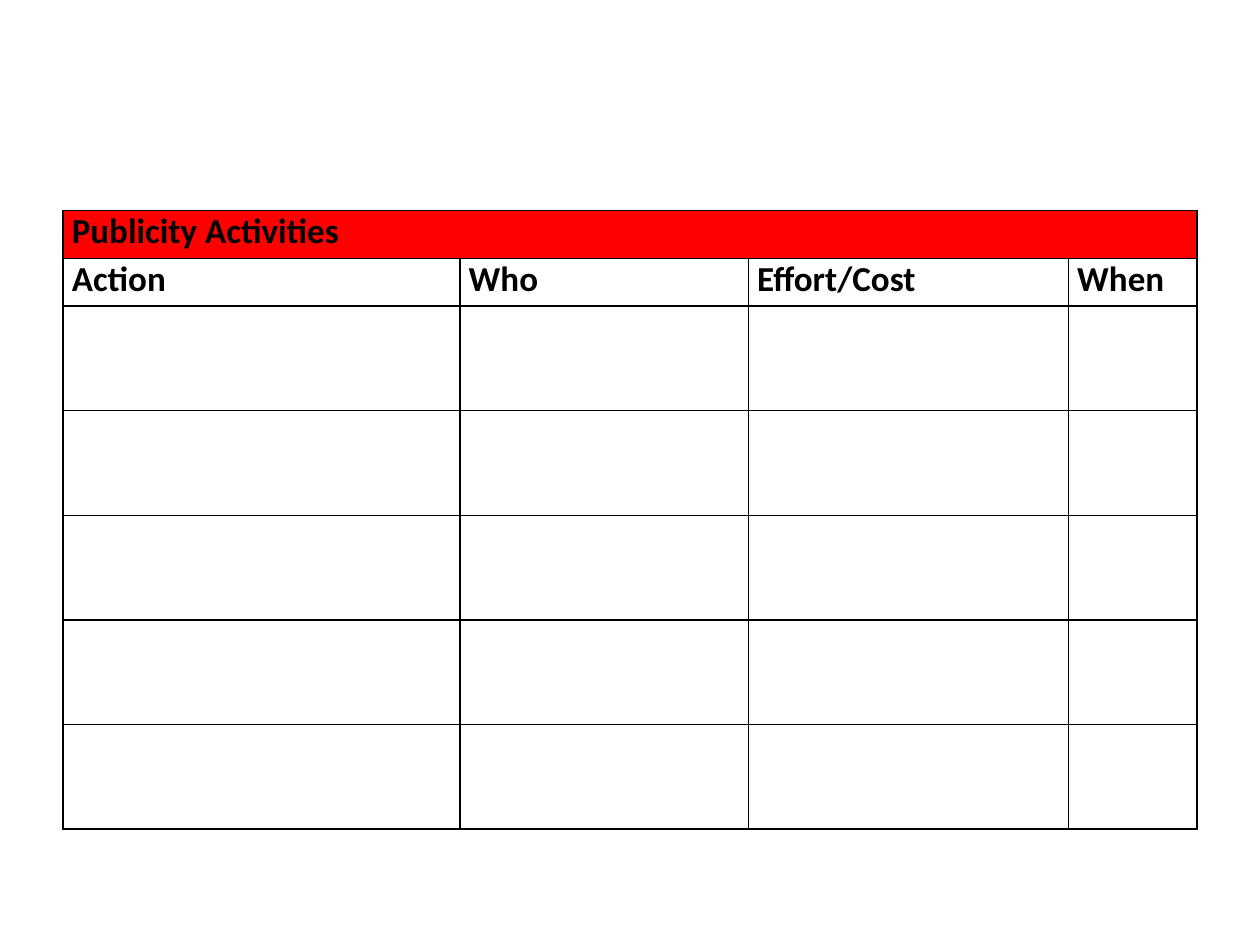
import pptx
import pptx.dml.color
import pptx.oxml
import pptx.oxml.ns
import pptx.util
from lxml import etree

THEME = {
    "band": "FF0000",
    "line": "000000",
    "line_width": 1,
    "text": {"name": "Calibri", "size": pptx.util.Pt(20), "bold": True},
    "ink": "000000",
}
SLIDE_W, SLIDE_H = 10, 7.5
LEFT, TOP = 0.05 * SLIDE_W, 1.67
COLUMNS = {"Action": 3.15, "Who": 2.29, "Effort/Cost": 2.54, "When": 1.02}
TITLE = "Publicity Activities"
HEAD_ROWS, BLANK_ROWS = 2, 5
ROW_HEIGHTS = [0.38] * HEAD_ROWS + [0.83] * BLANK_ROWS


def rgb(value):
    return pptx.dml.color.RGBColor.from_string(value)


def set_borders(cell):
    qn = pptx.oxml.ns.qn
    tc_pr = cell._tc.get_or_add_tcPr()
    for side in ("a:lnL", "a:lnR", "a:lnT", "a:lnB"):
        ln = etree.SubElement(tc_pr, qn(side),
                              w=str(pptx.util.Pt(THEME["line_width"])))
        fill = etree.SubElement(ln, qn("a:solidFill"))
        etree.SubElement(fill, qn("a:srgbClr"), val=THEME["line"])


def set_fill(cell, color=None):
    if color:
        cell.fill.solid()
        cell.fill.fore_color.rgb = rgb(color)
    else:
        cell.fill.background()


def write_heading(cell, text):
    margins = {"margin_left": 0.07, "margin_right": 0.07,
               "margin_top": 0, "margin_bottom": 0}
    for name, value in margins.items():
        setattr(cell, name, pptx.util.Inches(value))
    r = cell.text_frame.paragraphs[0].add_run()
    r.text = text
    for name, value in THEME["text"].items():
        setattr(r.font, name, value)
    r.font.color.rgb = rgb(THEME["ink"])


def add_grid(s):
    inches = pptx.util.Inches
    widths = list(COLUMNS.values())
    table = s.shapes.add_table(
        len(ROW_HEIGHTS), len(widths), inches(LEFT), inches(TOP),
        inches(sum(widths)), inches(sum(ROW_HEIGHTS))).table
    for column, width in zip(table.columns, widths):
        column.width = inches(width)
    for row, height in zip(table.rows, ROW_HEIGHTS):
        row.height = inches(height)
    for cell in table.iter_cells():
        set_borders(cell)
        set_fill(cell)
    return table


def main():
    prs = pptx.Presentation()
    prs.slide_width = pptx.util.Inches(SLIDE_W)
    prs.slide_height = pptx.util.Inches(SLIDE_H)
    s = prs.slides.add_slide(prs.slide_layouts[6])
    table = add_grid(s)

    # Title band across all columns
    band = table.cell(0, 0)
    band.merge(table.cell(0, len(COLUMNS) - 1))
    set_fill(band, THEME["band"])
    write_heading(band, TITLE)

    # Column headings
    for i, label in enumerate(COLUMNS):
        write_heading(table.cell(1, i), label)

    prs.save("out.pptx")


if __name__ == "__main__":
    main()
